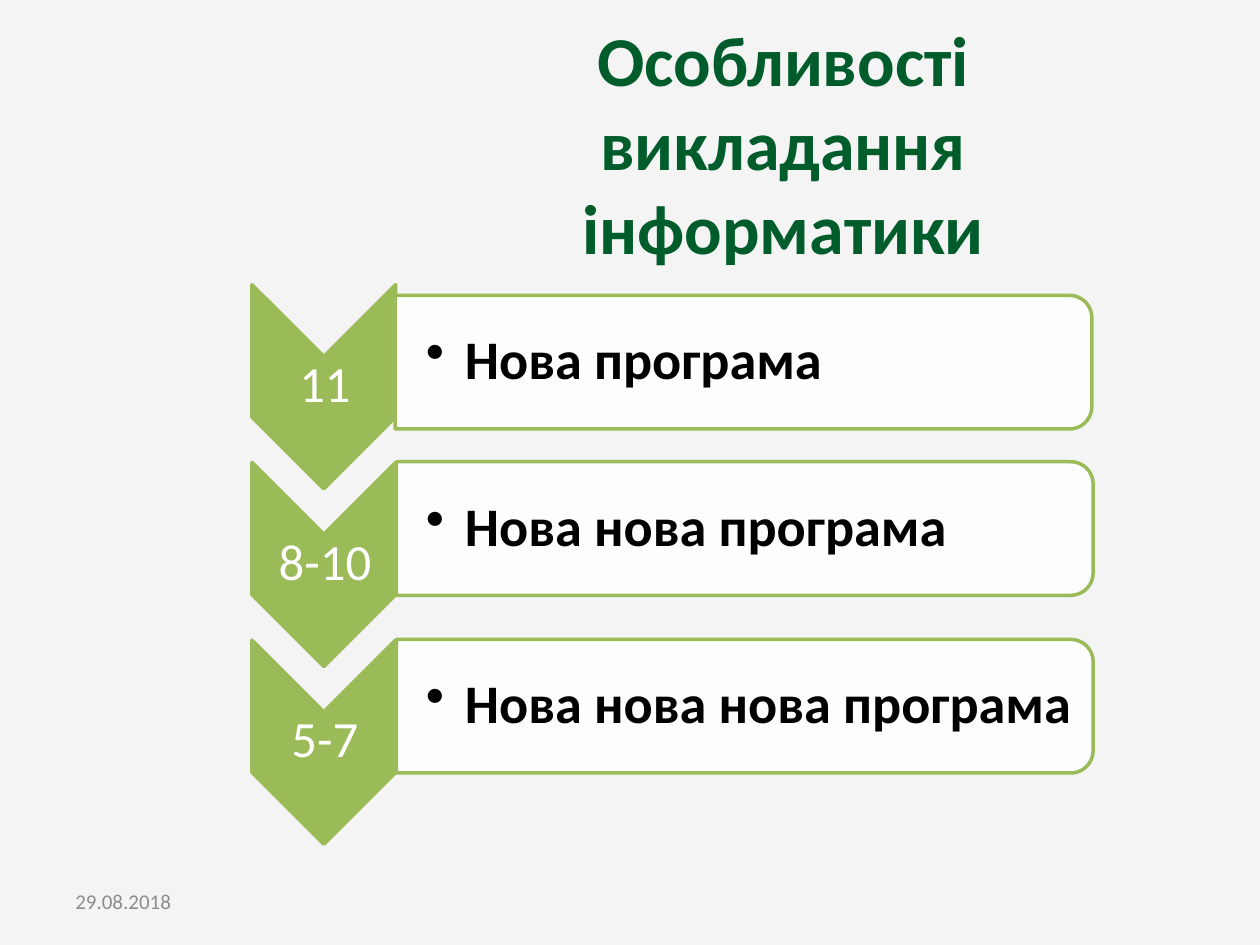
from lxml import etree
from pptx import Presentation
from pptx.dml.color import RGBColor
from pptx.enum.shapes import MSO_SHAPE
from pptx.enum.text import MSO_ANCHOR, PP_ALIGN
from pptx.oxml.ns import qn
from pptx.util import Inches, Pt

GREEN = "9BBB59"
ROW_PITCH = 1.41

presentation = Presentation()
presentation.slide_width, presentation.slide_height = Inches(10), Inches(7.5)
slide = presentation.slides.add_slide(presentation.slide_layouts[6])
slide.background.fill.solid()
slide.background.fill.fore_color.rgb = RGBColor.from_string("F4F4F4")


def add_text(text, box, size, color, bold=False, align=PP_ALIGN.LEFT,
             insets=(0.1, 0.05, 0.1, 0.05), spacing=None, bullet_indent=None):
    """Add a middle-anchored text box; box, insets and bullet_indent are in inches."""
    frame = slide.shapes.add_textbox(*map(Inches, box)).text_frame
    sides = ("margin_left", "margin_top", "margin_right", "margin_bottom")
    settings = dict(zip(sides, map(Inches, insets)))
    settings.update(word_wrap=True, vertical_anchor=MSO_ANCHOR.MIDDLE)
    for name, value in settings.items():
        setattr(frame, name, value)
    paragraph = frame.paragraphs[0]
    paragraph.alignment = align
    paragraph.line_spacing = spacing
    if bullet_indent:
        properties = paragraph._p.get_or_add_pPr()
        properties.set("marL", str(Inches(bullet_indent)))
        properties.set("indent", str(-Inches(bullet_indent)))
        etree.SubElement(properties, qn("a:buChar"), char="•")
    run = paragraph.add_run()
    run.text = text
    for name, value in {"name": "Calibri", "size": Pt(size), "bold": bold}.items():
        setattr(run.font, name, value)
    run.font.color.rgb = RGBColor.from_string(color)


def add_turned_shape(kind, box, fill):
    """Add a green-outlined shape turned a quarter clockwise."""
    shape = slide.shapes.add_shape(kind, *map(Inches, box))
    shape.rotation = 90
    shape.shadow.inherit = False
    shape.fill.solid()
    shape.fill.fore_color.rgb = RGBColor.from_string(fill)
    shape.line.color.rgb = RGBColor.from_string(GREEN)
    shape.line.width = Pt(2)
    return shape


add_text("Особливості викладання інформатики", (3.5, 0, 5.43, 2.26), 40, "005C2A",
         bold=True, align=PP_ALIGN.CENTER)
add_text("29.08.2018", (0.5, 6.95, 2.33, 0.4), 12, "8C8C8C")

# Grades, programme, left and top of the card before turning
rows = [
    ("11", "Нова програма", 5.37, 0.11),
    ("8-10", "Нова нова програма", 5.38, 1.43),
    ("5-7", "Нова нова нова програма", 5.38, 2.84),
]
for index, (grades, programme, card_left, card_top) in enumerate(rows):
    chevron_top = 2.5 + index * ROW_PITCH
    add_turned_shape(MSO_SHAPE.CHEVRON, (1.76, chevron_top, 1.62, 1.14), GREEN)
    add_text(grades, (2.01, chevron_top + 0.32, 1.14, 0.49), 29, "FFFFFF",
             align=PP_ALIGN.CENTER, insets=(0.02,) * 4, spacing=0.9)

    card = add_turned_shape(MSO_SHAPE.ROUND_2_SAME_RECTANGLE,
                            (card_left, card_top, 1.06, 5.53), "FFFFFF")
    card_color = card._element.spPr.find(qn("a:solidFill")).find(qn("a:srgbClr"))
    etree.SubElement(card_color, qn("a:alpha"), val="90000")
    add_text(programme, (3.14, card_top + 2.29, 5.48, 0.95), 31, "000000", bold=True,
             insets=(0.24, 0.02, 0.02, 0.02), spacing=0.9, bullet_indent=0.31)

presentation.save("out.pptx")
